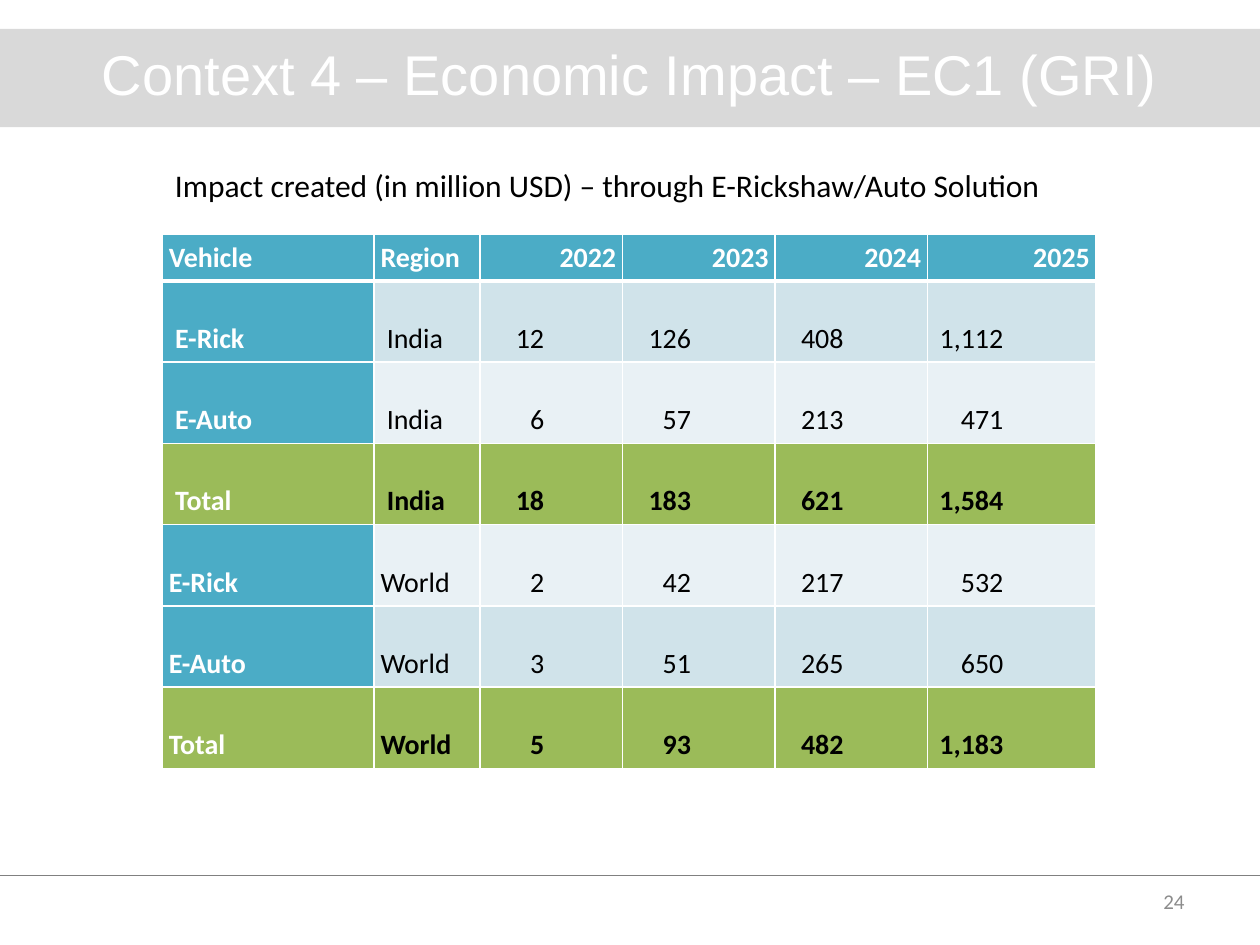
import pptx
import pptx.dml.color
import pptx.enum.dml
import pptx.enum.shapes
import pptx.enum.text
import pptx.oxml
import pptx.oxml.ns
import pptx.util

Inches = pptx.util.Inches
Pt = pptx.util.Pt
RGBColor = pptx.dml.color.RGBColor
Align = pptx.enum.text.PP_ALIGN
Anchor = pptx.enum.text.MSO_ANCHOR

WHITE = RGBColor(0xFF, 0xFF, 0xFF)
BLACK = RGBColor(0, 0, 0)
BAND_GREY = RGBColor(0xD9, 0xD9, 0xD9)
RULE_GREY = RGBColor(0x80, 0x80, 0x80)
NUMBER_GREY = RGBColor(0x8C, 0x8C, 0x8C)
TEAL = RGBColor(0x4B, 0xAC, 0xC6)
GREEN = RGBColor(0x9B, 0xBB, 0x59)
PALE = RGBColor(0xE9, 0xF1, 0xF5)
PALE_DARK = RGBColor(0xD0, 0xE3, 0xEA)

SLIDE_WIDTH, SLIDE_HEIGHT = 10, 7.5
BAND_TOP = 0.23
FOOTER_TOP = 6.95
CONTENT_LEFT, CONTENT_WIDTH = 1.29, 7.41
COLUMN_WIDTHS = [1.68, 0.84, 1.13, 1.21, 1.21, 1.34]
HEADER_HEIGHT, ROW_HEIGHT = 0.37, 0.645
CELL_INSET = 0.05
FIRST_NUMBER_COLUMN = 2

HEADER = ["Vehicle", "Region", "2022", "2023", "2024", "2025"]
ROWS = [
    ["E-Rick", "India", "12", "126", "408", "1,112"],
    ["E-Auto", "India", "6", "57", "213", "471"],
    ["Total", "India", "18", "183", "621", "1,584"],
    ["E-Rick", "World", "2", "42", "217", "532"],
    ["E-Auto", "World", "3", "51", "265", "650"],
    ["Total", "World", "5", "93", "482", "1,183"],
]


def write_text(frame, text, size=16, color=BLACK, font="Calibri", bold=False,
               align=Align.LEFT, anchor=Anchor.TOP):
    frame.word_wrap = True
    frame.vertical_anchor = anchor
    para = frame.paragraphs[0]
    para.alignment = align
    span = para.add_run()
    span.text = text
    span.font.name = font
    span.font.size = Pt(size)
    span.font.bold = bold
    span.font.color.rgb = color


def add_text(page, text, left, top, width, height, **text_format):
    box = page.shapes.add_textbox(
        Inches(left), Inches(top), Inches(width), Inches(height))
    write_text(box.text_frame, text, **text_format)


def add_title(page, text):
    title = page.shapes.title
    title.left, title.top = 0, Inches(BAND_TOP)
    title.width, title.height = Inches(SLIDE_WIDTH), Inches(0.7)
    write_text(title.text_frame, text, size=32, color=WHITE, font="Arial",
               align=Align.CENTER, anchor=Anchor.MIDDLE)


def add_band(page):
    band = page.shapes.add_shape(
        pptx.enum.shapes.MSO_SHAPE.RECTANGLE,
        0, Inches(BAND_TOP), Inches(SLIDE_WIDTH), Inches(0.78))
    band.shadow.inherit = False
    band.fill.solid()
    band.fill.fore_color.rgb = BAND_GREY
    band.line.fill.background()
    tree = page.shapes.title.element.getparent()
    tree.insert(tree.index(page.shapes.title.element), band.element)


def add_footer_rule(page):
    rule = page.shapes.add_connector(
        pptx.enum.shapes.MSO_CONNECTOR.STRAIGHT,
        0, Inches(FOOTER_TOP), Inches(SLIDE_WIDTH), Inches(FOOTER_TOP))
    rule.line.color.rgb = RULE_GREY
    rule.line.width = Pt(0.25)
    rule.line.dash_style = pptx.enum.dml.MSO_LINE.ROUND_DOT
    properties = rule.element.spPr
    properties.append(pptx.oxml.parse_xml(
        f"<a:effectLst {pptx.oxml.ns.nsdecls('a')}/>"))


def set_borders(cell, top, bottom):
    """Draw white borders; must run before the cell is filled."""
    properties = cell._tc.get_or_add_tcPr()
    for side, points in (("L", 1), ("R", 1), ("T", top), ("B", bottom)):
        properties.append(pptx.oxml.parse_xml(
            f"<a:ln{side} {pptx.oxml.ns.nsdecls('a')} w='{Pt(points)}'>"
            f"<a:solidFill><a:srgbClr val='{WHITE}'/></a:solidFill>"
            f"</a:ln{side}>"))


def format_cell(cell, text, fill, left=CELL_INSET, right=CELL_INSET,
                top_border=1, bottom_border=1, **text_format):
    set_borders(cell, top_border, bottom_border)
    cell.fill.solid()
    cell.fill.fore_color.rgb = fill
    cell.margin_left, cell.margin_right = Inches(left), Inches(right)
    cell.margin_top = cell.margin_bottom = Inches(CELL_INSET)
    write_text(cell.text_frame, text, **text_format)
    cell.vertical_anchor = Anchor.BOTTOM


def fill_header(table):
    for column, text in enumerate(HEADER):
        is_year = column >= FIRST_NUMBER_COLUMN
        format_cell(table.cell(0, column), text, TEAL, bottom_border=3,
                    color=WHITE, bold=True,
                    align=Align.RIGHT if is_year else Align.LEFT)


def fill_row(table, row, values):
    is_total = values[0] == "Total"
    label_inset = CELL_INSET * (2 if values[1] == "India" else 1)
    for column, text in enumerate(values):
        is_label = column == 0
        is_number = column >= FIRST_NUMBER_COLUMN
        if is_total:
            fill = GREEN
        elif is_label:
            fill = TEAL
        else:
            fill = PALE_DARK if row % 2 else PALE
        format_cell(
            table.cell(row, column), text, fill,
            left=CELL_INSET if is_number else label_inset,
            right=COLUMN_WIDTHS[column] * 0.55 if is_number else CELL_INSET,
            top_border=3 if row == 1 else 1,
            color=WHITE if is_label else BLACK,
            bold=is_label or is_total,
            align=Align.RIGHT if is_number else Align.LEFT)


def add_impact_table(page):
    height = HEADER_HEIGHT + ROW_HEIGHT * len(ROWS)
    table = page.shapes.add_table(
        len(ROWS) + 1, len(HEADER), Inches(CONTENT_LEFT), Inches(1.86),
        Inches(CONTENT_WIDTH), Inches(height)).table
    for column, width in zip(table.columns, COLUMN_WIDTHS):
        column.width = Inches(width)
    for index, row in enumerate(table.rows):
        row.height = Inches(ROW_HEIGHT if index else HEADER_HEIGHT)
    fill_header(table)
    for row, values in enumerate(ROWS, start=1):
        fill_row(table, row, values)


def main():
    deck = pptx.Presentation()
    deck.slide_width = Inches(SLIDE_WIDTH)
    deck.slide_height = Inches(SLIDE_HEIGHT)
    page = deck.slides.add_slide(deck.slide_layouts[5])
    add_band(page)
    add_footer_rule(page)
    add_text(page, "24", 7.17, FOOTER_TOP, 2.33, 0.4, size=12,
             color=NUMBER_GREY, align=Align.RIGHT, anchor=Anchor.MIDDLE)
    add_title(page, "Context 4 – Economic Impact – EC1 (GRI)")
    add_impact_table(page)
    add_text(page,
             "Impact created (in million USD) – through E-Rickshaw/Auto Solution",
             CONTENT_LEFT, 1.27, CONTENT_WIDTH, 0.4, size=18)
    deck.save("out.pptx")


if __name__ == "__main__":
    main()
